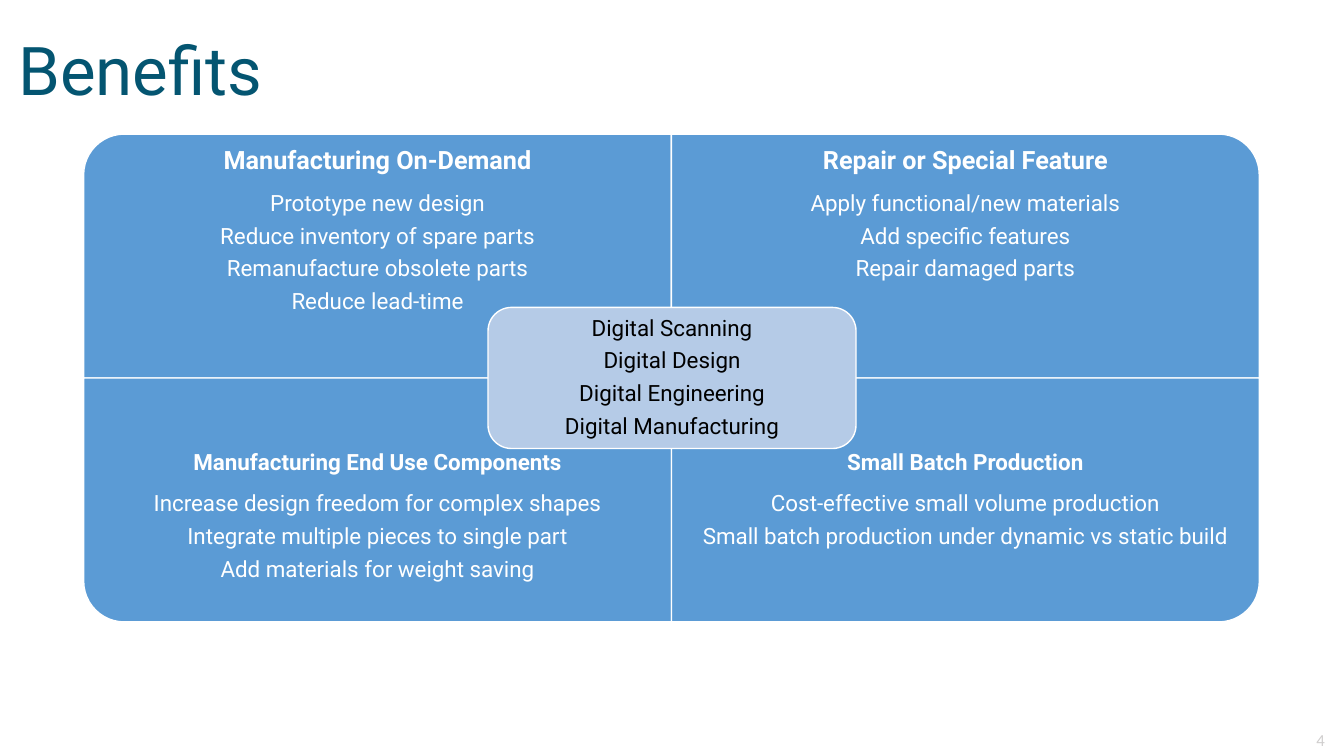
from pptx import Presentation
from pptx.dml.color import RGBColor
from pptx.enum.shapes import MSO_SHAPE as Shape
from pptx.enum.text import MSO_ANCHOR as Anchor, MSO_AUTO_SIZE as AutoSize, PP_ALIGN as Align
from pptx.util import Inches, Pt

TEAL = RGBColor(0x04, 0x55, 0x71)
BLUE = RGBColor(0x5B, 0x9B, 0xD5)
PALE_BLUE = RGBColor(0xB5, 0xCB, 0xE7)
GREY = RGBColor(0xD0, 0xCE, 0xCE)
WHITE = RGBColor(0xFF, 0xFF, 0xFF)
BLACK = RGBColor(0, 0, 0)

LEFT, TOP = 0.83, 1.33
WIDTH, HEIGHT = 5.83, 2.42
TEXT_HEIGHT = 1.81


def add_panel(page, kind, left, top, width, height, fill):
    panel = page.shapes.add_shape(
        kind, Inches(left), Inches(top), Inches(width), Inches(height))
    panel.shadow.inherit = False
    panel.fill.solid()
    panel.fill.fore_color.rgb = fill
    panel.line.color.rgb = WHITE
    panel.line.width = Pt(1)
    return panel


def add_text(page, left, top, width, height, inset, lines, color, heading_size=None):
    box = page.shapes.add_textbox(
        Inches(left), Inches(top), Inches(width), Inches(height))
    frame = box.text_frame
    frame.word_wrap = True
    frame.margin_left = frame.margin_right = Inches(inset)
    frame.margin_top = frame.margin_bottom = Inches(inset)
    frame.text = "\n".join(lines)
    for index, para in enumerate(frame.paragraphs):
        is_heading = index == 0 and heading_size is not None
        para.alignment = Align.CENTER
        para.line_spacing = 0.9
        para.space_after = Pt(12 if is_heading else 6)
        para.font.name = "Roboto"
        para.font.size = Pt(heading_size if is_heading else 16)
        para.font.bold = is_heading
        para.font.color.rgb = color
    return frame


deck = Presentation()
deck.slide_width, deck.slide_height = Inches(13.33), Inches(7.5)
page = deck.slides.add_slide(deck.slide_layouts[5])

title = page.shapes.title
title.left, title.top = Inches(0.08), Inches(0.23)
title.width, title.height = Inches(11.5), Inches(0.91)
title.text_frame.text = "Benefits"
title.text_frame.auto_size = AutoSize.NONE
title.text_frame.vertical_anchor = Anchor.BOTTOM
para = title.text_frame.paragraphs[0]
para.alignment = Align.LEFT
para.line_spacing = 0.9
para.font.name = "Roboto"
para.font.size = Pt(48)
para.font.color.rgb = TEAL

number = page.shapes.add_textbox(Inches(10.24), Inches(7.14), Inches(3), Inches(0.4))
number.text_frame.word_wrap = True
number.text_frame.vertical_anchor = Anchor.MIDDLE
number.text_frame.text = "4"
para = number.text_frame.paragraphs[0]
para.alignment = Align.RIGHT
para.font.name = "Calibri"
para.font.size = Pt(12)
para.font.color.rgb = GREY

quadrants = [
    (0, 0, 270, ["Manufacturing On-Demand", "Prototype new design",
                 "Reduce inventory of spare parts", "Remanufacture obsolete parts",
                 "Reduce lead-time"]),
    (0, 1, 0, ["Repair or Special Feature", "Apply functional/new materials",
               "Add specific features", "Repair damaged parts"]),
    (1, 0, 180, ["Manufacturing End Use Components",
                 "Increase design freedom for complex shapes",
                 "Integrate multiple pieces to single part",
                 "Add materials for weight saving"]),
    (1, 1, 90, ["Small Batch Production", "Cost-effective small volume production",
                "Small batch production under dynamic vs static build"]),
]
for row, column, rotation, lines in quadrants:
    left, top = LEFT + column * WIDTH, TOP + row * HEIGHT
    width, height = (HEIGHT, WIDTH) if rotation in (90, 270) else (WIDTH, HEIGHT)
    panel = add_panel(page, Shape.ROUND_1_RECTANGLE, left + (WIDTH - width) / 2,
                      top + (HEIGHT - height) / 2, width, height, BLUE)
    panel.rotation = rotation
    text_top = top + row * (HEIGHT - TEXT_HEIGHT)
    inset, heading_size = (0.12, 16) if row else (0.14, 18)
    add_text(page, left, text_top, WIDTH, TEXT_HEIGHT, inset, lines, WHITE, heading_size)

add_panel(page, Shape.ROUNDED_RECTANGLE, 4.84, 3.05, 3.65, 1.4, PALE_BLUE)
steps = ["Digital Scanning", "Digital Design", "Digital Engineering",
         "Digital Manufacturing"]
center = add_text(page, 4.91, 3.12, 3.51, 1.26, 0.07, steps, BLACK)
center.vertical_anchor = Anchor.MIDDLE

deck.save("out.pptx")
